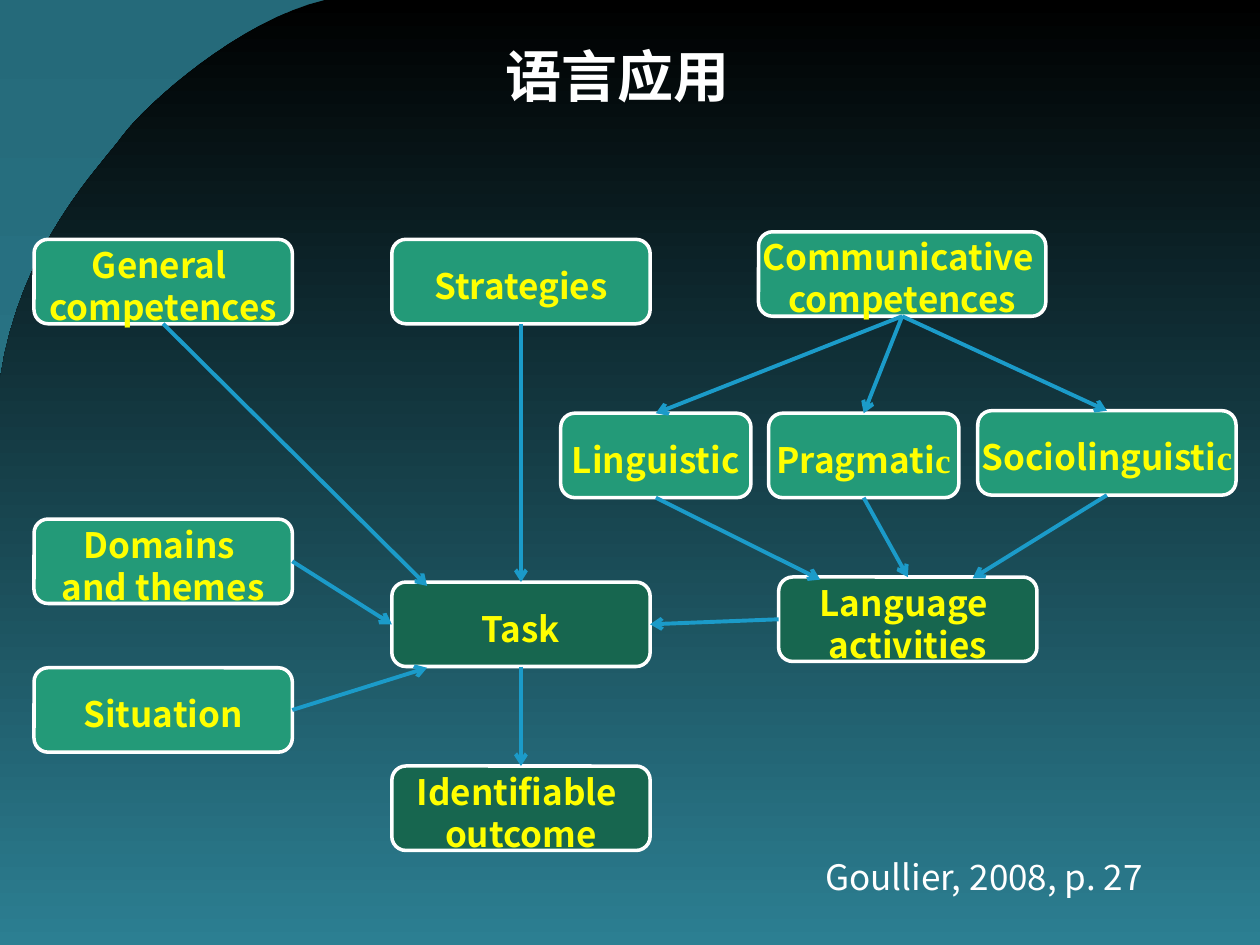
"""Build the language use diagram slide: competences and strategies leading to a task."""
from lxml.etree import SubElement
from pptx import Presentation
from pptx.dml.color import RGBColor
from pptx.enum.shapes import MSO_CONNECTOR, MSO_SHAPE
from pptx.enum.text import MSO_ANCHOR, MSO_AUTO_SIZE, PP_ALIGN
from pptx.oxml.ns import qn
from pptx.util import Inches, Pt

COLORS = {
    "white": "FFFFFF", "yellow": "FFFF00", "black": "000000", "arrow": "1B9BC9",
    "input": "239A78", "core": "17664F", "back": "256A7A", "teal": "2C7F92",
}
RGB = {name: RGBColor.from_string(code) for name, code in COLORS.items()}
SANS, SERIF = "Noto Sans CJK SC", "Times New Roman"


def style_paragraph(paragraph, size, color, align, bold=False):
    paragraph.alignment = align
    paragraph.font.name = SANS
    paragraph.font.size = Pt(size)
    paragraph.font.bold = bold
    paragraph.font.color.rgb = RGB[color]


def fill_gradient(fill, top, bottom):
    fill.gradient()
    fill.gradient_angle = 270
    for stop, color in zip(fill.gradient_stops, (top, bottom)):
        stop.color.rgb = RGB[color]


prs = Presentation()
prs.slide_width, prs.slide_height = Inches(10), Inches(7.5)
slide = prs.slides.add_slide(prs.slide_layouts[5])
shapes = slide.shapes
fill_gradient(slide.background.fill, "back", "teal")

arcs = [
    [(2.58, 0), (1.9, 0.16), (1.16, 0.83), (0.98, 1.07)],
    [(0.98, 1.07), (0.8, 1.32), (0.16, 1.94), (0, 3.01)],
]
STEPS = 16
outline = []
for arc in arcs:
    for step in range(1, STEPS + 1):
        t = step / STEPS
        weights = ((1 - t) ** 3, 3 * t * (1 - t) ** 2, 3 * t**2 * (1 - t), t**3)
        outline.append([sum(w * point[axis] for w, point in zip(weights, arc)) for axis in (0, 1)])
outline += [(0, 7.5), (10, 7.5), (10, 0)]
builder = shapes.build_freeform(Inches(2.58), 0)
builder.add_line_segments([(Inches(x), Inches(y)) for x, y in outline], close=True)
curved_panel = builder.convert_to_shape()
curved_panel.shadow.inherit = False
curved_panel.line.fill.background()
fill_gradient(curved_panel.fill, "black", "teal")
shapes._spTree.insert(2, curved_panel._element)

title = shapes.title
title.left, title.top, title.width, title.height = map(Inches, (0, 0.28, 9.8, 0.63))
title.text_frame.text = "语言应用"
title.text_frame.auto_size = MSO_AUTO_SIZE.NONE
title.text_frame.vertical_anchor = MSO_ANCHOR.MIDDLE
heading = title.text_frame.paragraphs[0]
style_paragraph(heading, 32, "white", PP_ALIGN.CENTER, bold=True)
SubElement(heading.runs[0]._r.get_or_add_rPr(), qn("a:ea"), typeface=SANS)

citation = shapes.add_textbox(*map(Inches, (6.34, 6.74, 2.83, 0.44))).text_frame
citation.word_wrap = True
citation.text = "Goullier, 2008, p. 27"
style_paragraph(citation.paragraphs[0], 20, "white", PP_ALIGN.RIGHT)

BOX_W, BOX_H = 2.05, 0.67
LEFT_X, TASK_X = 0.27, 3.11
nodes = {
    "general": (LEFT_X, 1.9, BOX_W, "input", ["General ", "competences"]),
    "strategies": (TASK_X, 1.9, BOX_W, "input", ["Strategies"]),
    "communicative": (6.02, 1.84, 2.28, "input", ["Communicative ", "competences"]),
    "domains": (LEFT_X, 4.12, BOX_W, "input", ["Domains ", "and themes"]),
    "situation": (LEFT_X, 5.3, BOX_W, "input", ["Situation"]),
    "task": (TASK_X, 4.62, BOX_W, "core", ["Task"]),
    "linguistic": (4.45, 3.28, 1.51, "input", ["Linguistic"]),
    "pragmatic": (6.1, 3.28, 1.51, "input", ["Pragmati|c"]),
    "sociolinguistic": (7.76, 3.26, BOX_W, "input", ["Sociolinguisti|c"]),
    "activities": (6.18, 4.58, BOX_W, "core", ["Language ", "activities"]),
    "outcome": (TASK_X, 6.08, BOX_W, "core", ["Identifiable ", "outcome"]),
}
boxes = {}
for key, (x, y, width, color, lines) in nodes.items():
    box = shapes.add_shape(MSO_SHAPE.ROUNDED_RECTANGLE, *map(Inches, (x, y, width, BOX_H)))
    box.shadow.inherit = False
    box.fill.solid()
    box.fill.fore_color.rgb = RGB[color]
    box.line.color.rgb = RGB["white"]
    box.line.width = Pt(2)
    label = box.text_frame
    label.word_wrap = False
    label.vertical_anchor = MSO_ANCHOR.MIDDLE
    label.margin_top, label.margin_bottom = Inches(0.06), 0
    for index, line in enumerate(lines):
        paragraph = label.add_paragraph() if index else label.paragraphs[0]
        style_paragraph(paragraph, 20, "yellow", PP_ALIGN.CENTER, bold=True)
        paragraph.line_spacing = Pt(24)
        main, _, serif_ending = line.partition("|")
        paragraph.add_run().text = main
        if serif_ending:
            ending = paragraph.add_run()
            ending.text = serif_ending
            ending.font.name = SERIF
    boxes[key] = box

TOP, LEFT, BOTTOM, RIGHT = range(4)
links = [
    ("general", BOTTOM, (3.39, 4.65)),
    ("domains", RIGHT, ("task", LEFT)),
    ("situation", RIGHT, (3.39, 5.3)),
    ("strategies", BOTTOM, ("task", TOP)),
    ("task", BOTTOM, ("outcome", TOP)),
    ("communicative", BOTTOM, ("linguistic", TOP)),
    ("communicative", BOTTOM, ("pragmatic", TOP)),
    ("communicative", BOTTOM, ("sociolinguistic", TOP)),
    ("linguistic", BOTTOM, (6.51, 4.6)),
    ("pragmatic", BOTTOM, ("activities", TOP)),
    ("sociolinguistic", BOTTOM, (7.72, 4.59)),
    ("activities", LEFT, ("task", RIGHT)),
]
for source, side, target in links:
    joined = target[0] in boxes
    end = (0, 0) if joined else map(Inches, target)
    arrow = shapes.add_connector(MSO_CONNECTOR.STRAIGHT, 0, 0, *end)
    arrow.begin_connect(boxes[source], side)
    if joined:
        arrow.end_connect(boxes[target[0]], target[1])
    arrow.line.color.rgb = RGB["arrow"]
    arrow.line.width = Pt(2.25)
    SubElement(arrow.line._get_or_add_ln(), qn("a:tailEnd"), type="arrow")
    SubElement(arrow._element.spPr, qn("a:effectLst"))

prs.save("out.pptx")
